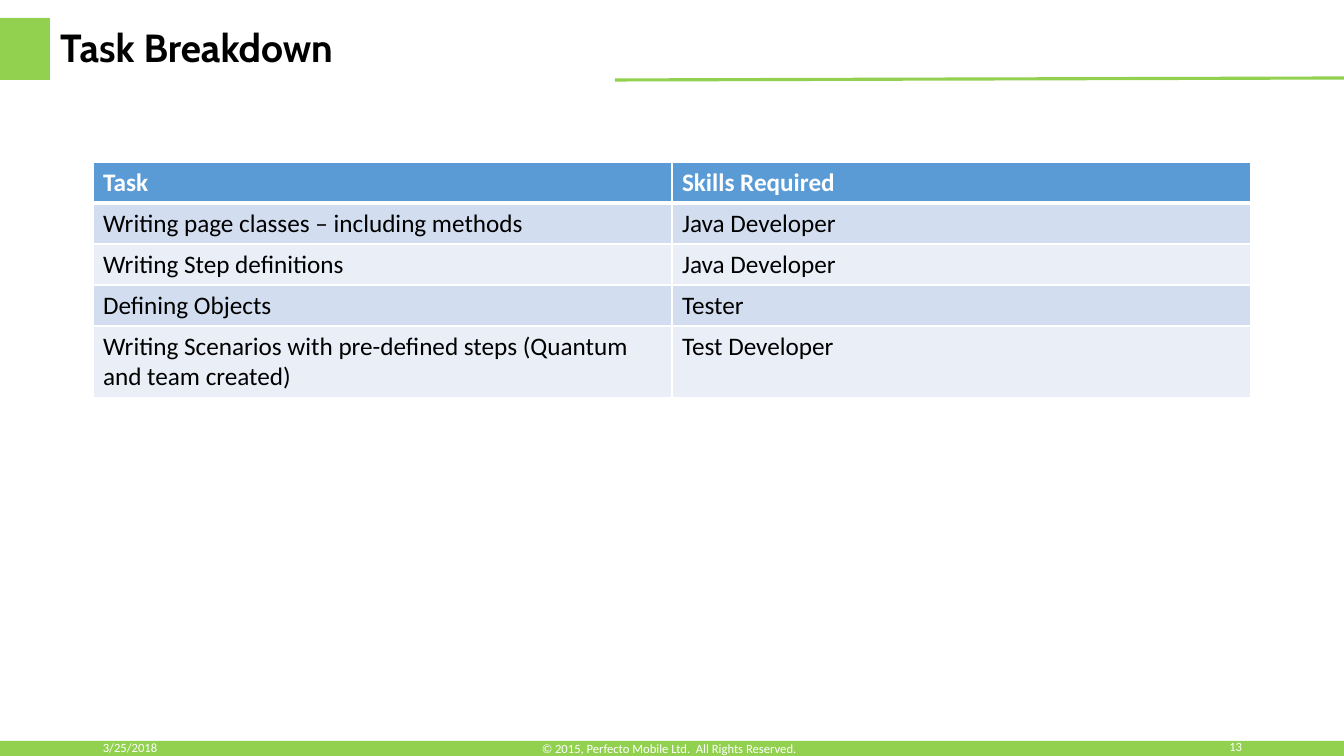
from dataclasses import dataclass

from lxml.etree import SubElement
from pptx import Presentation
from pptx.dml.color import RGBColor as RGB
from pptx.enum.shapes import MSO_CONNECTOR as CONN, MSO_SHAPE as SHAPE
from pptx.enum.text import MSO_ANCHOR as ANCHOR, MSO_AUTO_SIZE as FIT, PP_ALIGN as ALIGN
from pptx.oxml.ns import qn
from pptx.util import Emu, Pt

WIDTH, HEIGHT = 1344, 756


@dataclass(frozen=True)
class Theme:
    accent: str = "92D050"
    header: str = "5B9BD5"
    bands: tuple = ("D2DEEF", "EAEFF7")
    white: str = "FFFFFF"
    black: str = "000000"
    heading_font: str = "Cabin"
    body_font: str = "Calibri"
    title_size: int = 28
    table_size: int = 18
    footer_size: int = 9


THEME = Theme()
TASKS = [
    ("Task", "Skills Required"),
    ("Writing page classes – including methods", "Java Developer"),
    ("Writing Step definitions", "Java Developer"),
    ("Defining Objects", "Tester"),
    ("Writing Scenarios with pre-defined steps (Quantum and team created)", "Test Developer"),
]


def px(n):
    """Convert px to EMU at 100.8 px to the inch."""
    return Emu(round(n * 914400 / 100.8))


def write(tf, text, size, color, font=THEME.body_font, bold=False,
          align=ALIGN.LEFT, spacing=None):
    p = tf.paragraphs[0]
    p.alignment = align
    p.line_spacing = spacing
    r = p.add_run()
    r.text = text
    r.font.name, r.font.size, r.font.bold = font, Pt(size), bold
    r.font.color.rgb = RGB.from_string(color)


def add_block(slide, x, y, w, h):
    s = slide.shapes.add_shape(SHAPE.RECTANGLE, px(x), px(y), px(w), px(h))
    s.shadow.inherit = False
    s.fill.solid()
    s.fill.fore_color.rgb = RGB.from_string(THEME.accent)
    s.line.fill.background()


def add_header(slide, x, y, w, h, title):
    # Accent square and sloping rule
    add_block(slide, x, y + 12, 50, 62)
    rule = slide.shapes.add_connector(
        CONN.STRAIGHT, px(x + 615), px(y + 74), px(x + w), px(y + 72))
    rule.line.color.rgb = RGB.from_string(THEME.accent)
    rule.line.width = Pt(2.25)
    SubElement(rule._element.spPr, qn("a:effectLst"))

    # Title
    s = slide.shapes.title
    s.left, s.top, s.width, s.height = px(x + 50), px(y), px(564), px(h)
    tf = s.text_frame
    tf.word_wrap, tf.auto_size, tf.vertical_anchor = True, FIT.NONE, ANCHOR.MIDDLE
    write(tf, title, THEME.title_size, THEME.black,
          font=THEME.heading_font, bold=True, spacing=0.9)


def set_borders(cell, **widths):
    tc_pr = cell._tc.get_or_add_tcPr()
    for side in "LRTB":
        ln = SubElement(tc_pr, qn(f"a:ln{side}"), w=str(Pt(widths.get(side, 1))))
        fill = SubElement(ln, qn("a:solidFill"))
        SubElement(fill, qn("a:srgbClr"), val=THEME.white)


def add_task_table(slide, x, y, w, row_h, last_h, rows):
    n_rows, n_cols = len(rows), len(rows[0])
    total_h = row_h * (n_rows - 1) + last_h
    table = slide.shapes.add_table(
        n_rows, n_cols, px(x), px(y), px(w), px(total_h)).table
    for col in table.columns:
        col.width = px(w / n_cols)
    for i, values in enumerate(rows):
        table.rows[i].height = px(last_h if i == n_rows - 1 else row_h)
        is_header = i == 0
        fill = THEME.header if is_header else THEME.bands[(i - 1) % 2]
        color = THEME.white if is_header else THEME.black
        for j, text in enumerate(values):
            cell = table.cell(i, j)
            # A heavier line parts the header from the first row
            set_borders(cell, B=3 if i == 0 else 1, T=3 if i == 1 else 1)
            cell.fill.solid()
            cell.fill.fore_color.rgb = RGB.from_string(fill)
            write(cell.text_frame, text, THEME.table_size, color, bold=is_header)


def add_footer(slide, x, y, w, h):
    add_block(slide, x, y, w, h)
    # Date, slide number and copyright line
    for text, left, top, width, height, align in (
        ("3/25/2018", 93, -9, 302, 31, ALIGN.LEFT),
        ("13", 950, -8, 302, 27, ALIGN.RIGHT),
        ("© 2015, Perfecto Mobile Ltd.  All Rights Reserved.", 442, -8, 454, 31, ALIGN.CENTER),
    ):
        box = slide.shapes.add_textbox(px(x + left), px(y + top), px(width), px(height))
        tf = box.text_frame
        tf.word_wrap, tf.vertical_anchor = True, ANCHOR.MIDDLE
        write(tf, text, THEME.footer_size, THEME.white, align=align)


def main():
    prs = Presentation()
    prs.slide_width, prs.slide_height = px(WIDTH), px(HEIGHT)
    slide = prs.slides.add_slide(prs.slide_layouts.get_by_name("Title Only"))
    add_header(slide, 0, 6, WIDTH, 88, "Task Breakdown")
    add_task_table(slide, 93, 162, 1158, 41, 70, TASKS)
    add_footer(slide, 0, 741, WIDTH, 15)
    prs.save("out.pptx")


if __name__ == "__main__":
    main()
